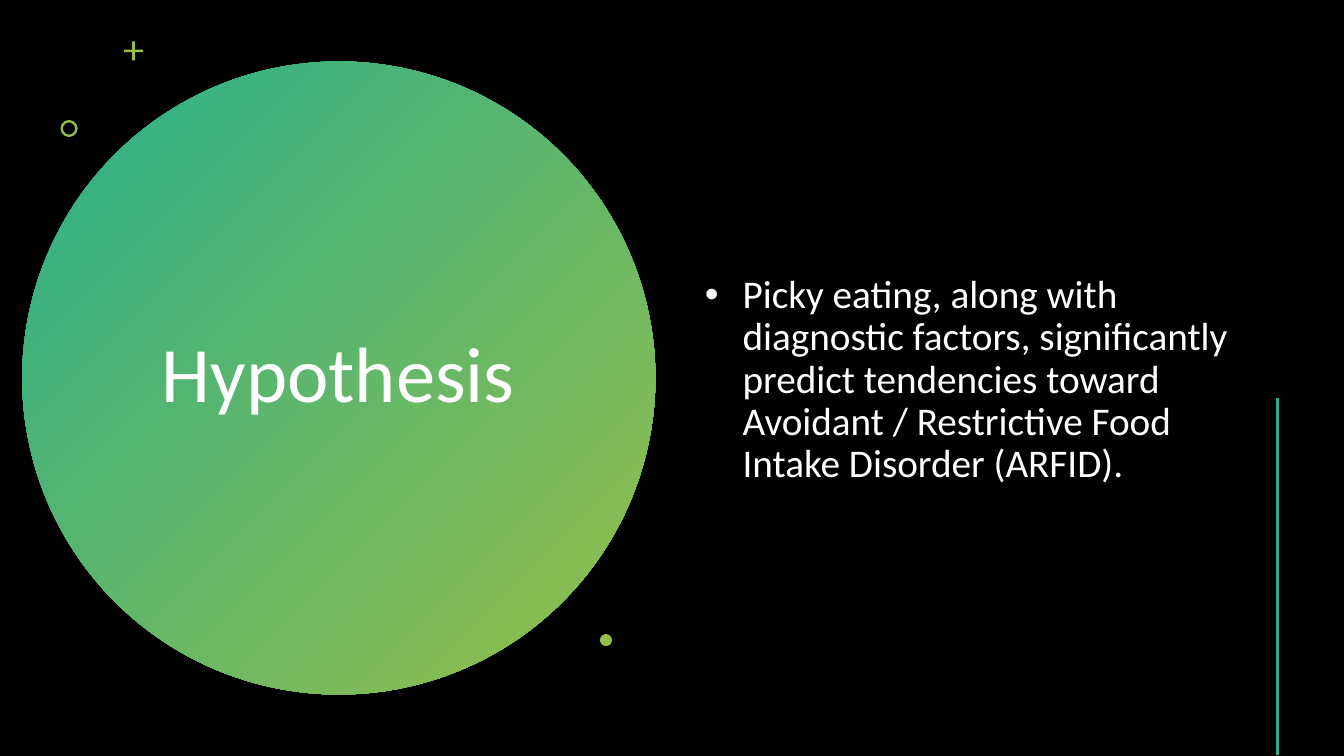
from pptx import Presentation
from pptx.dml.color import RGBColor
from pptx.enum.shapes import MSO_CONNECTOR, MSO_SHAPE
from pptx.enum.text import MSO_ANCHOR, MSO_AUTO_SIZE, PP_ALIGN
from pptx.oxml.ns import qn
from pptx.util import Inches, Pt
from lxml import etree

OVAL, RING, PLUS = MSO_SHAPE.OVAL, MSO_SHAPE.DONUT, MSO_SHAPE.CROSS
STRAIGHT = MSO_CONNECTOR.STRAIGHT
MIDDLE = MSO_ANCHOR.MIDDLE
NO_AUTOFIT = MSO_AUTO_SIZE.NONE
LEFT, CENTER = PP_ALIGN.LEFT, PP_ALIGN.CENTER

FONT = "Calibri"
COLORS = {"background": "000000", "text": "FFFFFF", "teal": "29AF8C", "green": "97BE49"}


def color(name):
    return RGBColor.from_string(COLORS[name])


def write_text(placeholder, text, *, box, size, align=LEFT):
    """Place a placeholder and fill it with one formatted paragraph."""
    placeholder.left, placeholder.top, placeholder.width, placeholder.height = map(Inches, box)
    frame = placeholder.text_frame
    frame.text = text
    frame.word_wrap = True
    frame.auto_size = NO_AUTOFIT
    frame.vertical_anchor = MIDDLE
    paragraph = frame.paragraphs[0]
    paragraph.alignment = align
    paragraph.line_spacing = 0.9
    paragraph.space_before = Pt(0)
    font = paragraph.runs[0].font
    font.name, font.size = FONT, Pt(size)
    font.color.rgb = color("text")


def add_ornament(slide, kind, left, top, size, adjustment=None):
    """Add a square green shape without outline."""
    ornament = slide.shapes.add_shape(kind, Inches(left), Inches(top), Inches(size), Inches(size))
    ornament.shadow.inherit = False
    ornament.line.fill.background()
    ornament.fill.solid()
    ornament.fill.fore_color.rgb = color("green")
    if adjustment is not None:
        ornament.adjustments[0] = adjustment
    return ornament


def add_gradient_circle(slide, left, top, size):
    circle = add_ornament(slide, OVAL, left, top, size)
    circle.fill.gradient()
    circle.fill.gradient_angle = 315  # counter-clockwise: top left to bottom right
    for stop, name, position in zip(circle.fill.gradient_stops, ("teal", "green"), (0, 1)):
        stop.color.rgb = color(name)
        stop.position = position
    return circle


def add_accent_line(slide, x, top, bottom):
    accent = slide.shapes.add_connector(STRAIGHT, Inches(x), Inches(top), Inches(x), Inches(bottom))
    accent.line.color.rgb = color("teal")
    accent.line.width = Pt(2)
    etree.SubElement(accent.line._get_or_add_ln().getparent(), qn("a:effectLst"))


def main():
    deck = Presentation()
    deck.slide_width, deck.slide_height = Inches(13.33), Inches(7.5)
    slide = deck.slides.add_slide(deck.slide_layouts[1])
    slide.background.fill.solid()
    slide.background.fill.fore_color.rgb = color("background")

    # Title on the large circle, which goes behind the placeholders
    circle = add_gradient_circle(slide, 0.22, 0.61, 6.28)
    slide.shapes.title.element.addprevious(circle.element)
    write_text(slide.shapes.title, "Hypothesis",
               box=(1.36, 1.41, 3.99, 4.67), size=56, align=CENTER)

    # Hypothesis statement
    write_text(slide.placeholders[1],
               "Picky eating, along with diagnostic factors, significantly predict "
               "tendencies toward Avoidant / Restrictive Food Intake Disorder (ARFID).",
               box=(6.89, 0.6, 5.63, 6.35), size=28)

    # Small ornaments and the accent line
    add_ornament(slide, PLUS, 1.23, 0.41, 0.19, adjustment=0.43)
    add_ornament(slide, RING, 0.6, 1.19, 0.17, adjustment=0.14)
    add_ornament(slide, OVAL, 5.95, 6.29, 0.12)
    add_accent_line(slide, 12.67, 3.95, 7.49)

    deck.save("out.pptx")


if __name__ == "__main__":
    main()
